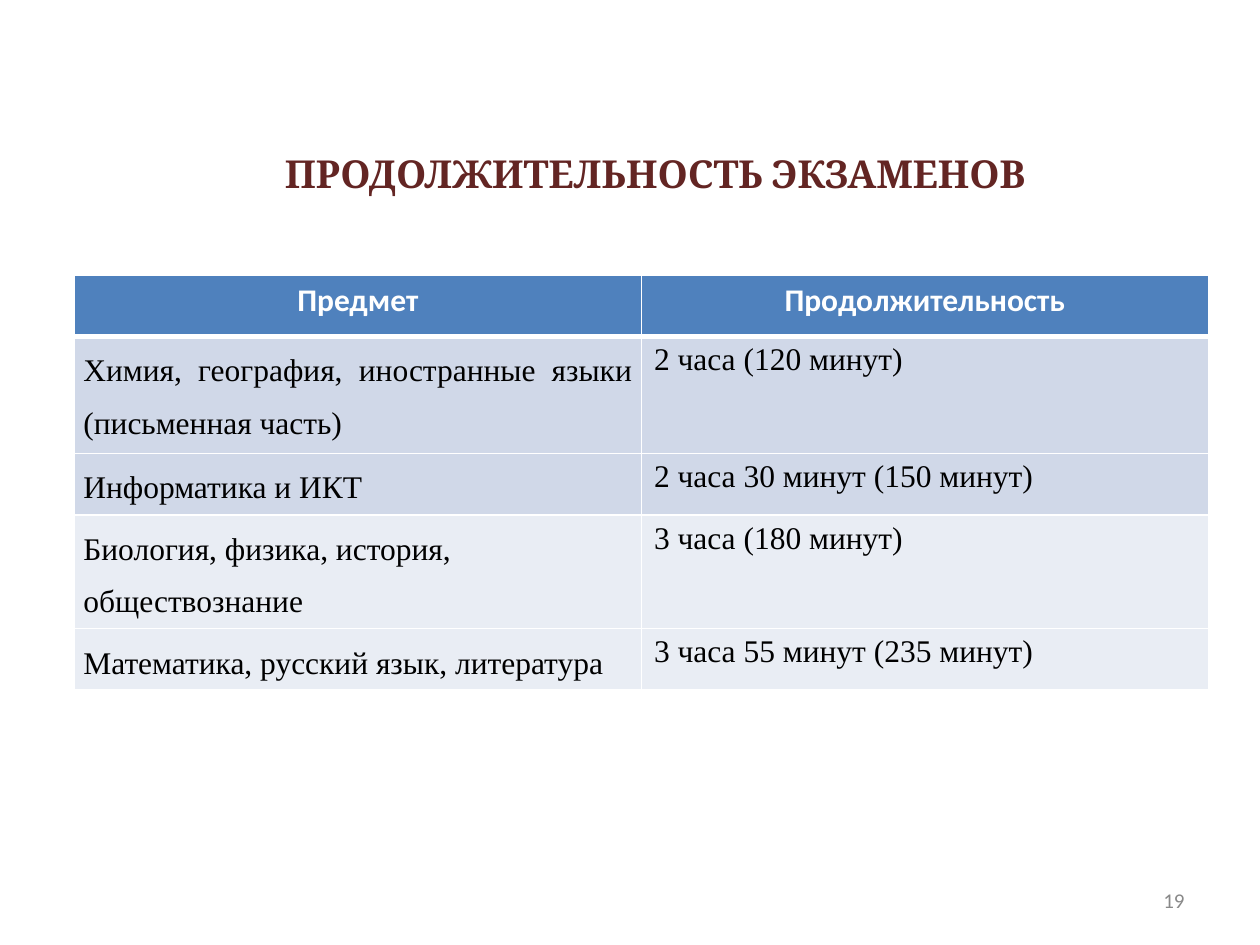
from lxml import etree
from pptx import Presentation
from pptx.dml.color import RGBColor
from pptx.enum.text import MSO_ANCHOR, PP_ALIGN
from pptx.oxml.ns import qn
from pptx.util import Cm, Pt

LEFT, CENTER, RIGHT, JUSTIFY = PP_ALIGN.LEFT, PP_ALIGN.CENTER, PP_ALIGN.RIGHT, PP_ALIGN.JUSTIFY
MIDDLE = MSO_ANCHOR.MIDDLE

COLORS = {
    "title": "632523",
    "header": "4F81BD",
    "band_dark": "D0D8E8",
    "band_light": "E9EDF4",
    "white": "FFFFFF",
    "text": "000000",
    "number": "898989",
}
HEADERS = ["Предмет", "Продолжительность"]
EXAMS = [
    ("Химия, география, иностранные языки (письменная часть) ", "2 часа (120 минут)",
     JUSTIFY, "band_dark", 2.36),
    ("Информатика и\u00a0ИКТ ", "2 часа 30 минут (150 минут)", JUSTIFY, "band_dark", 1.24),
    ("Биология, физика, история, обществознание", "3 часа (180 минут)",
     LEFT, "band_light", 2.29),
    ("Математика, русский язык, литература", "3 часа 55 минут (235 минут)",
     LEFT, "band_light", 1.24),
]
HEADER_HEIGHT = 1.24


def set_text(tf, text, font, size, color, align, bold=False):
    """Write one formatted paragraph into a text frame."""
    p = tf.paragraphs[0]
    p.text = text
    p.alignment = align
    p.font.name = font
    p.font.size = Pt(size)
    p.font.bold = bold
    p.font.color.rgb = RGBColor.from_string(COLORS[color])
    return p


def set_borders(cell, top, bottom):
    """Draw white cell borders, with the top and bottom widths in points."""
    tcPr = cell._tc.get_or_add_tcPr()
    widths = {"a:lnL": 1, "a:lnR": 1, "a:lnT": top, "a:lnB": bottom}
    for i, (tag, width) in enumerate(widths.items()):
        ln = etree.Element(qn(tag), w=str(Pt(width)))
        fill = etree.SubElement(ln, qn("a:solidFill"))
        etree.SubElement(fill, qn("a:srgbClr"), val=COLORS["white"])
        tcPr.insert(i, ln)


def style_cell(cell, fill, top=1, bottom=1):
    """Fill a cell and give it borders."""
    cell.fill.solid()
    cell.fill.fore_color.rgb = RGBColor.from_string(COLORS[fill])
    set_borders(cell, top, bottom)


def add_title(s, left, top, width, height):
    """Place and format the title placeholder."""
    title = s.shapes.title
    title.left, title.top, title.width, title.height = map(Cm, (left, top, width, height))
    tf = title.text_frame
    tf.vertical_anchor = MIDDLE
    set_text(tf, "ПРОДОЛЖИТЕЛЬНОСТЬ ЭКЗАМЕНОВ", "Cambria", 22, "title", CENTER, True)


def add_exam_table(s, left, top, width):
    """Add the table of subjects and exam durations."""
    heights = [HEADER_HEIGHT] + [exam[-1] for exam in EXAMS]
    table = s.shapes.add_table(len(heights), len(HEADERS), Cm(left), Cm(top),
                               Cm(width), Cm(sum(heights))).table
    for row, height in zip(table.rows, heights):
        row.height = Cm(height)
    for col in table.columns:
        col.width = Cm(width / len(HEADERS))

    for cell, header in zip(table.rows[0].cells, HEADERS):
        style_cell(cell, "header", bottom=3)
        set_text(cell.text_frame, header, "Calibri", 18, "white", CENTER, True)

    for i, (subject, duration, align, band, _) in enumerate(EXAMS, 1):
        subject_cell, duration_cell = table.rows[i].cells
        for cell in (subject_cell, duration_cell):
            style_cell(cell, band, top=3 if i == 1 else 1)
        subject_cell.margin_left = subject_cell.margin_right = Cm(0.18)
        subject_cell.margin_top = subject_cell.margin_bottom = 0
        p = set_text(subject_cell.text_frame, subject, "Times New Roman", 18, "text", align)
        p.line_spacing = 1.5
        set_text(duration_cell.text_frame, duration, "Times New Roman", 18, "text", LEFT)


def add_slide_number(s, left, top, width, height):
    """Add the slide number at the bottom right."""
    tf = s.shapes.add_textbox(Cm(left), Cm(top), Cm(width), Cm(height)).text_frame
    tf.word_wrap = True
    tf.vertical_anchor = MIDDLE
    set_text(tf, "19", "Calibri", 12, "number", RIGHT)


def main():
    """Build the slide and save it."""
    prs = Presentation()
    prs.slide_width, prs.slide_height = Cm(25.4), Cm(19.05)
    s = prs.slides.add_slide(prs.slide_layouts[5])
    add_title(s, 1.78, 2.39, 22.86, 2.18)
    add_exam_table(s, 1.5, 5.54, 22.86)
    add_slide_number(s, 18.2, 17.65, 5.93, 1.01)
    prs.save("out.pptx")


if __name__ == "__main__":
    main()
